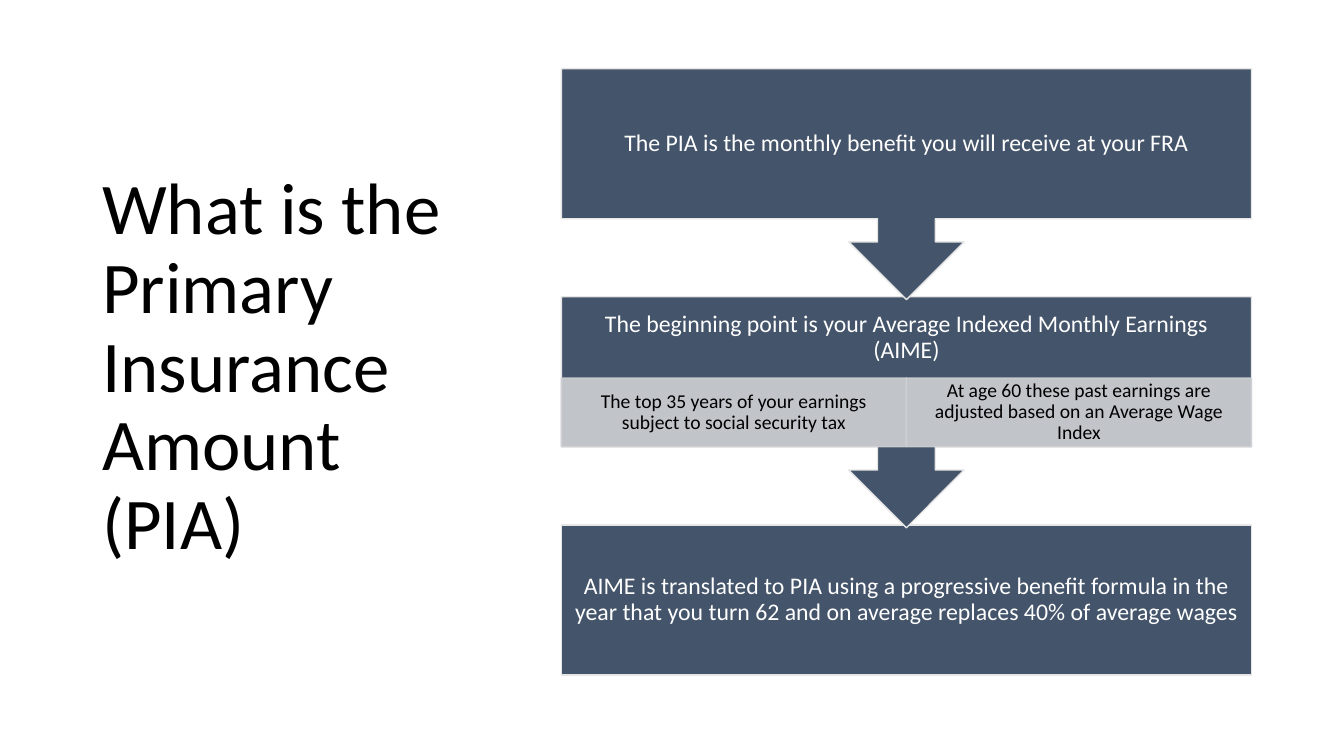
from dataclasses import dataclass

from lxml import etree
from pptx import Presentation
from pptx.dml import color
from pptx.enum import shapes, text
from pptx.oxml import ns
from pptx.util import Pt


@dataclass(frozen=True)
class Theme:
    font: str = "Calibri"
    navy: str = "44546A"
    outline: str = "E7E6E6"
    grey: str = "CFD1D4"
    white: str = "FFFFFF"
    black: str = "000000"
    title_size: float = 52
    step_size: float = 17
    detail_size: float = 14
    line_width: float = 1
    detail_opacity: int = 90


@dataclass(frozen=True)
class Step:
    wording: str
    details: tuple[str, ...] = ()


THEME = Theme()
STEPS = (
    Step("The PIA is the monthly benefit you will receive at your FRA"),
    Step(
        "The beginning point is your Average Indexed Monthly Earnings (AIME)",
        (
            "The top 35 years of your earnings subject to social security tax",
            "At age 60 these past earnings are adjusted based on an Average Wage Index",
        ),
    ),
    Step(
        "AIME is translated to PIA using a progressive benefit formula in the year "
        "that you turn 62 and on average replaces 40% of average wages"
    ),
)
LEFT, TOP, WIDTH = 401, 49, 493
BODY_HEIGHT, CALLOUT_HEIGHT, PITCH = 107.2, 165, 163
DETAIL_OFFSET, DETAIL_HEIGHT = 58, 49
STEP_INSET = 9.4


def write(box, wording: str, size: float, ink: str, align, insets: tuple) -> None:
    frame = box.text_frame
    frame.text = wording
    frame.word_wrap = True
    frame.vertical_anchor = text.MSO_ANCHOR.MIDDLE
    frame.margin_left, frame.margin_top, frame.margin_right, frame.margin_bottom = map(Pt, insets)
    para = frame.paragraphs[0]
    para.alignment = align
    para.line_spacing = 0.9
    for span in para.runs:
        span.font.name = THEME.font
        span.font.size = Pt(size)
        span.font.color.rgb = color.RGBColor.from_string(ink)


def add_block(page, kind, bounds: tuple, fill: str, line: str):
    box = page.shapes.add_shape(kind, *map(Pt, bounds))
    box.shadow.inherit = False
    box.fill.solid()
    box.fill.fore_color.rgb = color.RGBColor.from_string(fill)
    box.line.color.rgb = color.RGBColor.from_string(line)
    box.line.width = Pt(THEME.line_width)
    return box


def set_opacity(box, percent: int) -> None:
    for tint in box.element.spPr.iter(ns.qn("a:srgbClr")):
        etree.SubElement(tint, ns.qn("a:alpha")).set("val", str(percent * 1000))


def add_step(page, step: Step, top: float, is_last: bool) -> None:
    kind = shapes.MSO_SHAPE.RECTANGLE if is_last else shapes.MSO_SHAPE.DOWN_ARROW_CALLOUT
    height = BODY_HEIGHT if is_last else CALLOUT_HEIGHT
    box = add_block(page, kind, (LEFT, top, WIDTH, height), THEME.navy, THEME.outline)
    detail_room = DETAIL_HEIGHT if step.details else 0
    insets = (STEP_INSET, STEP_INSET, STEP_INSET, STEP_INSET + detail_room)
    write(box, step.wording, THEME.step_size, THEME.white, text.PP_ALIGN.CENTER, insets)
    for column, detail in enumerate(step.details):
        width = WIDTH / len(step.details)
        bounds = (LEFT + column * width, top + DETAIL_OFFSET, width, DETAIL_HEIGHT)
        cell = add_block(page, shapes.MSO_SHAPE.RECTANGLE, bounds, THEME.grey, THEME.grey)
        set_opacity(cell, THEME.detail_opacity)
        write(cell, detail, THEME.detail_size, THEME.black, text.PP_ALIGN.CENTER, (8, 1.4, 8, 1.4))


def main() -> None:
    deck = Presentation()
    deck.slide_width, deck.slide_height = Pt(960), Pt(540)
    page = deck.slides.add_slide(deck.slide_layouts[6])
    title = page.shapes.add_textbox(Pt(66), Pt(44), Pt(266), Pt(438.5))
    write(title, "What is the Primary Insurance Amount (PIA)", THEME.title_size,
          THEME.black, text.PP_ALIGN.LEFT, (7.2, 3.6, 7.2, 3.6))
    for index, step in reversed(list(enumerate(STEPS))):
        add_step(page, step, TOP + index * PITCH, index == len(STEPS) - 1)
    deck.save("out.pptx")


if __name__ == "__main__":
    main()
